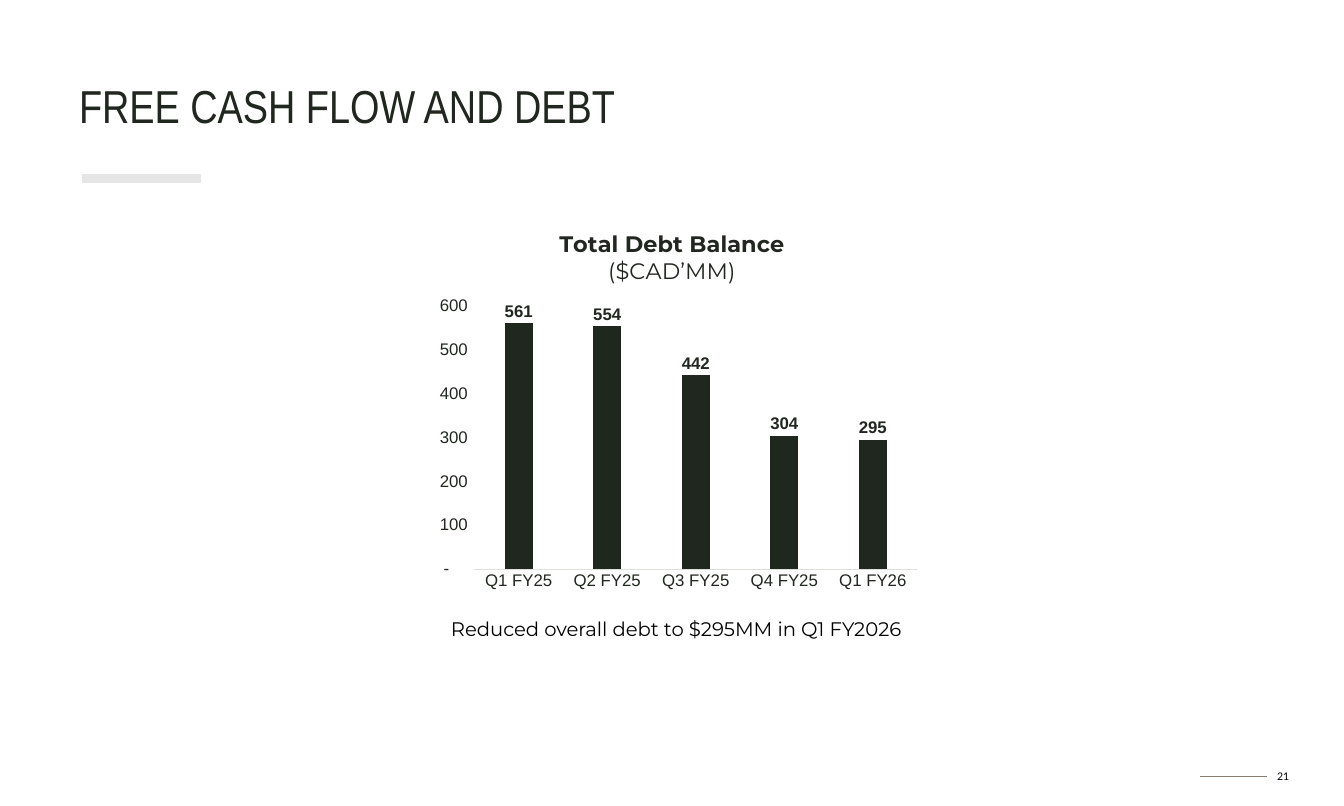
from lxml import etree
from pptx import Presentation
from pptx.chart.data import CategoryChartData
from pptx.dml.color import RGBColor
from pptx.enum.chart import XL_CHART_TYPE, XL_LABEL_POSITION, XL_TICK_MARK
from pptx.enum.shapes import MSO_CONNECTOR
from pptx.enum.text import PP_ALIGN
from pptx.oxml.ns import qn
from pptx.util import Pt

DARK = RGBColor(0x20, 0x27, 0x1E)
BLACK = RGBColor(0, 0, 0)
PALE = RGBColor(0xE7, 0xE6, 0xE6)
TAUPE = RGBColor(0x89, 0x7F, 0x75)
AXIS = RGBColor(0xDC, 0xE2, 0xDA)
LEFT, CENTER = PP_ALIGN.LEFT, PP_ALIGN.CENTER
COLUMN = XL_CHART_TYPE.COLUMN_CLUSTERED
OUTSIDE = XL_LABEL_POSITION.OUTSIDE_END
NO_TICK = XL_TICK_MARK.NONE
STRAIGHT = MSO_CONNECTOR.STRAIGHT
FORMAT = '_(* #,##0_);_(* \\(#,##0\\);_(* "-"??_);_('
DEBT = {"Q1 FY25": 561, "Q2 FY25": 554, "Q3 FY25": 442,
        "Q4 FY25": 304, "Q1 FY26": 295}


def style(font, size, name="Arial", color=DARK, bold=False):
    font.size = Pt(size)
    font.name = name
    font.color.rgb = color
    font.bold = bold


def add_text(slide, box, text, size, name, color=DARK, align=LEFT,
             space=1.0, pad=(7.2, 3.6), wrap=True):
    shape = slide.shapes.add_textbox(*map(Pt, box))
    frame = shape.text_frame
    frame.word_wrap = wrap
    frame.margin_left = frame.margin_right = Pt(pad[0])
    frame.margin_top = frame.margin_bottom = Pt(pad[1])
    para = frame.paragraphs[0]
    para.alignment = align
    para.line_spacing = space
    run = para.add_run()
    run.text = text
    style(run.font, size, name, color)


def add_rule(slide, left, top, width, color, weight):
    line = slide.shapes.add_connector(
        STRAIGHT, Pt(left), Pt(top), Pt(left + width), Pt(top))
    line.line.color.rgb = color
    line.line.width = Pt(weight)
    etree.SubElement(line._element.spPr, qn("a:effectLst"))


def set_plot(chart, x, y, w, h):
    area = chart._chartSpace.chart.plotArea
    for old in area.findall(qn("c:layout")):
        area.remove(old)
    layout = etree.Element(qn("c:layout"))
    manual = etree.SubElement(layout, qn("c:manualLayout"))
    rules = {"layoutTarget": "inner", "xMode": "edge", "yMode": "edge",
             "x": x, "y": y, "w": w, "h": h}
    for tag, value in rules.items():
        etree.SubElement(manual, qn(f"c:{tag}")).set("val", str(value))
    area.insert(0, layout)


def add_header(slide, box):
    left, top, width, height = box
    add_text(slide, box, "FREE CASH FLOW AND DEBT", 66, "Arial Narrow",
             space=0.9)
    add_rule(slide, left + 11.5, top + 138.25, 170, PALE, 12.25)


def add_debt(slide, box):
    data = CategoryChartData(number_format=FORMAT)
    data.categories = list(DEBT)
    data.add_series("Series 1", list(DEBT.values()))
    chart = slide.shapes.add_chart(COLUMN, *map(Pt, box), data).chart
    style(chart.font, 16)
    chart.has_legend = False
    chart.has_title = True
    frame = chart.chart_title.text_frame
    lines = [("Total Debt Balance", True), ("($CAD’MM)", False)]
    for index, (text, bold) in enumerate(lines):
        para = frame.add_paragraph() if index else frame.paragraphs[0]
        run = para.add_run()
        run.text = text
        style(run.font, 32, "Montserrat", bold=bold)
    set_plot(chart, 0.11, 0.23, 0.874, 0.682)

    for axis in (chart.category_axis, chart.value_axis):
        axis.major_tick_mark = axis.minor_tick_mark = NO_TICK
        axis.has_major_gridlines = False
        style(axis.tick_labels.font, 24)
    line = chart.category_axis.format.line
    line.color.rgb = AXIS
    line.width = Pt(0.75)
    scale = chart.value_axis
    scale.minimum_scale, scale.maximum_scale = 0, 600
    scale.major_unit = 100
    scale.format.line.fill.background()
    scale.tick_labels.number_format = FORMAT
    scale.tick_labels.number_format_is_linked = False

    plot = chart.plots[0]
    plot.gap_width, plot.overlap = 219, -27
    plot.vary_by_categories = False
    bars = plot.series[0]
    bars.format.fill.solid()
    bars.format.fill.fore_color.rgb = DARK
    labels = bars.data_labels
    labels.show_value = True
    labels.position = OUTSIDE
    labels.number_format = FORMAT
    labels.number_format_is_linked = False
    style(labels.font, 24, bold=True)


def add_note(slide, box):
    add_text(slide, box, "Reduced overall debt to $295MM in Q1 FY2026",
             28, "Montserrat", BLACK, CENTER, 1.5)


def add_footer(slide, box):
    left, top, width, height = box
    add_rule(slide, left, top + height / 2, 96, TAUPE, 0.75)
    add_text(slide, (left + 106, top, width - 106, height), "21", 15,
             "Lato", BLACK, pad=(4.3, 4.3), wrap=False)


def main():
    deck = Presentation()
    deck.slide_width, deck.slide_height = Pt(1920.24), Pt(1152)
    slide = deck.slides.add_slide(deck.slide_layouts[6])
    add_header(slide, (105.84, 116.64, 1491, 109.5))
    add_debt(slide, (598.3, 310.3, 723.6, 551.5))
    add_note(slide, (591, 861.8, 750, 290))
    add_footer(slide, (1714.3, 1096, 132, 26))
    deck.save("out.pptx")


if __name__ == "__main__":
    main()
